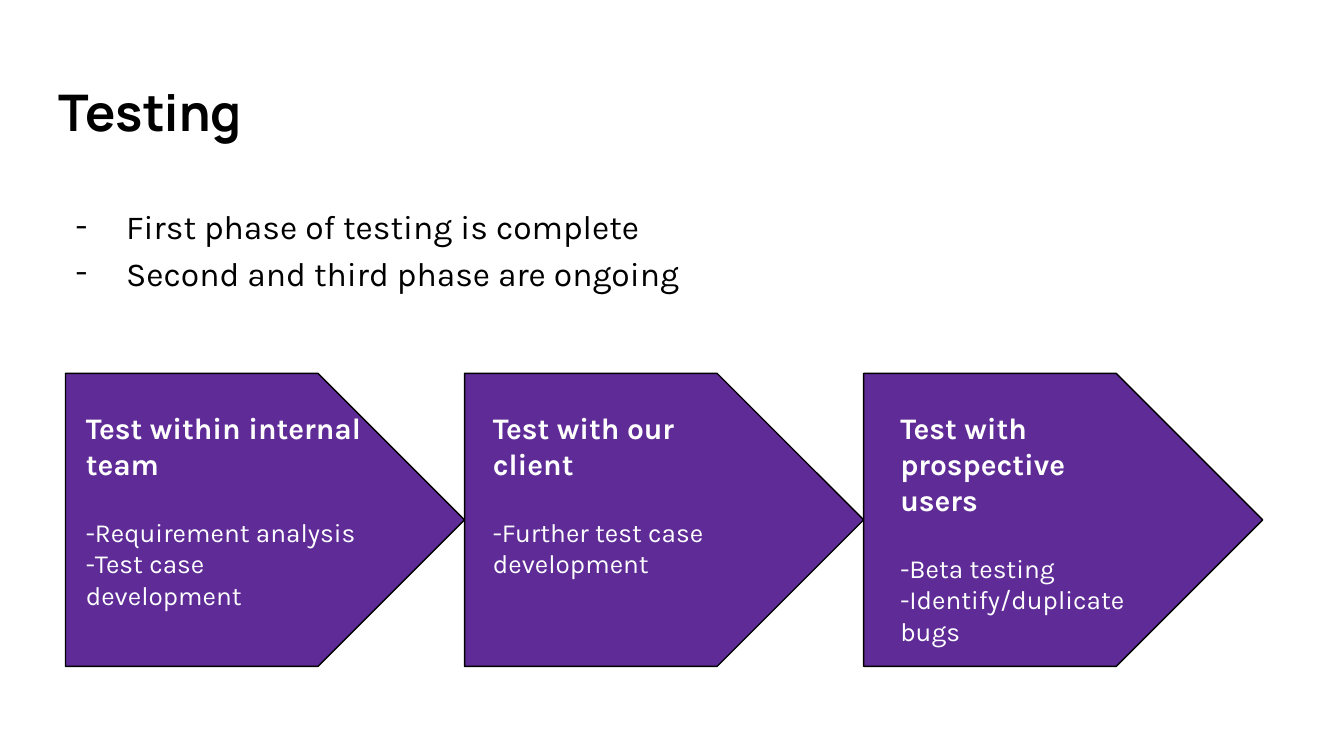
"""Build the Testing slide with its three test phases."""
from dataclasses import dataclass

from lxml import etree
from pptx import Presentation
from pptx.dml.color import RGBColor
from pptx.enum.shapes import MSO_SHAPE
from pptx.enum.text import MSO_ANCHOR, MSO_AUTO_SIZE
from pptx.oxml.ns import qn
from pptx.util import Pt

PENTAGON = MSO_SHAPE.PENTAGON
MIDDLE = MSO_ANCHOR.MIDDLE
GROW = MSO_AUTO_SIZE.SHAPE_TO_FIT_TEXT
BLACK, WHITE, PURPLE = "000000", "FFFFFF", "5E2B97"
BODY_FONT, TITLE_FONT = "Karla", "Manrope"
INSET = 7.2
ARROW_LEFT, ARROW_TOP, ARROW_WIDTH, ARROW_HEIGHT = 35.1, 200, 213.8, 157
TEXT_TOP = 212.4
HEADING_GAP = 18.7


@dataclass(frozen=True)
class Phase:
    """One test phase and the place of its text."""

    heading: str
    tasks: tuple[str, ...]
    left: float
    width: float
    height: float


PHASES = (
    Phase("Test within internal team",
          ("-Requirement analysis", "-Test case development"), 38.9, 164.2, 106.6),
    Phase("Test with our client",
          ("-Further test case development",), 257, 134.6, 124.6),
    Phase("Test with prospective users",
          ("-Beta testing", "-Identify/duplicate bugs"), 475.2, 143.3, 123.8),
)


def colour(value: str) -> RGBColor:
    """Turn a hex string into a colour."""
    return RGBColor.from_string(value)


def style(para, font: str, size: float, value: str, bold: bool = False) -> None:
    """Format every run of a paragraph."""
    for span in para.runs:
        span.font.name = font
        span.font.size = Pt(size)
        span.font.bold = bold
        span.font.color.rgb = colour(value)


def add_text(page, lines: tuple[str, ...], left: float, top: float,
             width: float, height: float):
    """Add a wrapping text box and return its frame."""
    box = page.shapes.add_textbox(Pt(left), Pt(top), Pt(width), Pt(height))
    frame = box.text_frame
    frame.word_wrap = True
    frame.margin_left = frame.margin_right = Pt(INSET)
    frame.margin_top = frame.margin_bottom = Pt(INSET)
    frame.text = "\n".join(lines)
    return frame


def add_dash(para) -> None:
    """Give a paragraph a hanging dash bullet."""
    properties = para._p.get_or_add_pPr()
    properties.set("marL", str(Pt(36)))
    properties.set("indent", str(Pt(-27)))
    bullet_colour = etree.SubElement(properties, qn("a:buClr"))
    etree.SubElement(bullet_colour, qn("a:srgbClr"), val=BLACK)
    etree.SubElement(properties, qn("a:buFont"), typeface=BODY_FONT)
    etree.SubElement(properties, qn("a:buChar"), char="-")


def add_arrow(page, index: int) -> None:
    """Draw the arrow of one phase."""
    arrow = page.shapes.add_shape(
        PENTAGON, Pt(ARROW_LEFT + index * ARROW_WIDTH), Pt(ARROW_TOP),
        Pt(ARROW_WIDTH), Pt(ARROW_HEIGHT))
    arrow.shadow.inherit = False
    arrow.fill.solid()
    arrow.fill.fore_color.rgb = colour(PURPLE)
    arrow.line.color.rgb = colour(BLACK)
    arrow.line.width = Pt(0.75)


def add_phase_text(page, phase: Phase) -> None:
    """Write the heading and tasks of one phase."""
    frame = add_text(page, (phase.heading, *phase.tasks),
                     phase.left, TEXT_TOP, phase.width, phase.height)
    frame.auto_size = GROW
    heading, *tasks = frame.paragraphs
    style(heading, BODY_FONT, 16, WHITE, bold=True)
    tasks[0].space_before = Pt(HEADING_GAP)
    for para in tasks:
        style(para, BODY_FONT, 14, WHITE)


def main() -> None:
    """Build and save the deck."""
    deck = Presentation()
    deck.slide_width, deck.slide_height = Pt(720), Pt(405)
    page = deck.slides.add_slide(deck.slide_layouts[6])

    title = add_text(page, ("Testing",), 24.5, 35.3, 671, 49)
    title.vertical_anchor = MIDDLE
    style(title.paragraphs[0], TITLE_FONT, 27, BLACK, bold=True)

    body = add_text(page, ("First phase of testing is complete",
                           "Second and third phase are ongoing"),
                    24.5, 100.1, 671, 269.3)
    for para in body.paragraphs:
        add_dash(para)
        para.line_spacing = 1.15
        style(para, BODY_FONT, 18, BLACK)

    for index in range(len(PHASES)):
        add_arrow(page, index)
    for phase in PHASES:
        add_phase_text(page, phase)

    deck.save("out.pptx")


if __name__ == "__main__":
    main()
